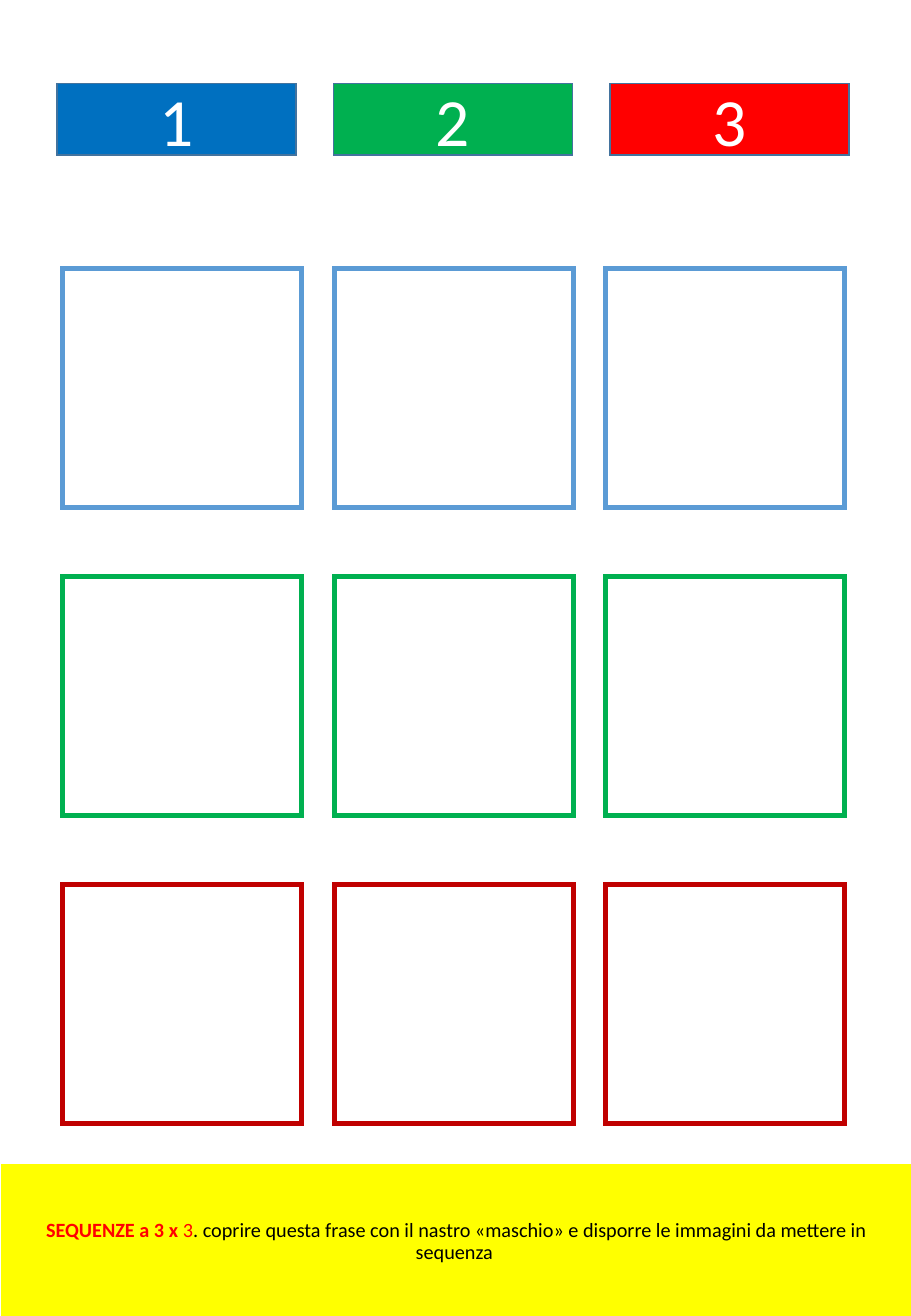
from dataclasses import dataclass

from lxml import etree
from pptx import Presentation
from pptx.dml.color import RGBColor
from pptx.enum.shapes import MSO_SHAPE
from pptx.enum.text import MSO_ANCHOR, MSO_AUTO_SIZE, PP_ALIGN
from pptx.oxml.ns import qn
from pptx.util import Pt

RECT = MSO_SHAPE.RECTANGLE
MIDDLE = MSO_ANCHOR.MIDDLE
CENTER = PP_ALIGN.CENTER
NO_FIT = MSO_AUTO_SIZE.NONE
TITLE_ONLY = 5


@dataclass(frozen=True)
class Theme:
    font: str = "Calibri"
    digit: float = 40
    note: float = 12
    white: str = "FFFFFF"
    black: str = "000000"
    red: str = "FF0000"
    yellow: str = "FFFF00"
    edge: str = "43739E"
    heads: tuple = ("0070C0", "00B050", "FF0000")
    rows: tuple = ("5B9BD5", "00B050", "C00000")


THEME = Theme()


def color(code):
    return RGBColor.from_string(code)


def add_box(slide, box, fill, line, width):
    """Add a filled rectangle whose outline has sharp corners."""
    shape = slide.shapes.add_shape(RECT, *map(Pt, box))
    shape.shadow.inherit = False
    shape.fill.solid()
    shape.fill.fore_color.rgb = color(fill)
    shape.line.color.rgb = color(line)
    shape.line.width = Pt(width)
    edge = shape.element.spPr.find(qn("a:ln"))
    etree.SubElement(edge, qn("a:miter"), lim="800000")
    return shape


def add_run(para, text, size, ink, bold=False):
    run = para.add_run()
    run.text = text
    font = run.font
    font.name = THEME.font
    font.size = Pt(size)
    font.bold = bold
    font.color.rgb = color(ink)


def add_heads(slide, box):
    """Place the numbered column heads, spread evenly over the box."""
    left, top, width, height = box
    wide = 141.8
    step = (width - wide) / (len(THEME.heads) - 1)
    for col, fill in enumerate(THEME.heads):
        place = (left + col * step, top, wide, height)
        head = add_box(slide, place, fill, THEME.edge, 1)
        frame = head.text_frame
        frame.vertical_anchor = MIDDLE
        para = frame.paragraphs[0]
        para.alignment = CENTER
        add_run(para, str(col + 1), THEME.digit, THEME.white)


def add_grid(slide, box):
    """Place a square grid of empty cards, one outline colour per row."""
    left, top, width, height = box
    side, count = 141.8, len(THEME.rows)
    across = (width - side) / (count - 1)
    down = (height - side) / (count - 1)
    for row, line in enumerate(THEME.rows):
        for col in range(count):
            place = (left + col * across, top + row * down, side, side)
            add_box(slide, place, THEME.white, line, 3)


def set_title(slide, box):
    title = slide.shapes.title
    title.left, title.top, title.width, title.height = map(Pt, box)
    title.fill.solid()
    title.fill.fore_color.rgb = color(THEME.yellow)
    frame = title.text_frame
    frame.word_wrap = True
    frame.auto_size = NO_FIT
    frame.vertical_anchor = MIDDLE
    frame.margin_left = frame.margin_right = Pt(10)
    frame.margin_top = frame.margin_bottom = Pt(5)
    para = frame.paragraphs[0]
    para.alignment = CENTER
    para.line_spacing = 0.9
    add_run(para, "SEQUENZE a 3 x ", THEME.note, THEME.red, True)
    add_run(para, "3", THEME.note, THEME.red)
    add_run(para, ". coprire questa frase con il nastro «maschio» e disporre "
            "le immagini da mettere in sequenza ", THEME.note, THEME.black)


def main():
    deck = Presentation()
    deck.slide_width = Pt(540)
    deck.slide_height = Pt(779.8)
    slide = deck.slides.add_slide(deck.slide_layouts[TITLE_ONLY])
    add_heads(slide, (33.8, 49.4, 469.5, 42.5))
    add_grid(slide, (37.2, 158.9, 463.6, 506.8))
    set_title(slide, (0.7, 689.8, 540, 92.2))
    deck.save("out.pptx")


if __name__ == "__main__":
    main()
